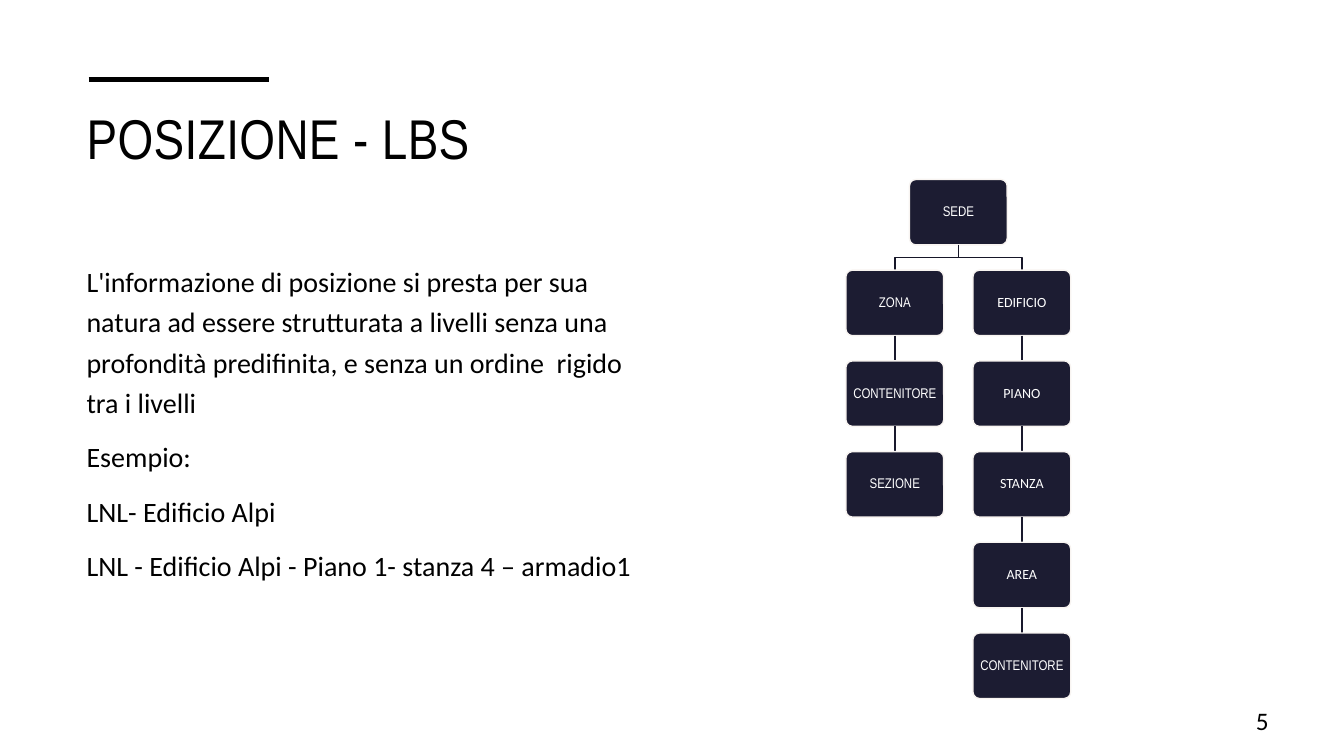
from lxml import etree
from pptx import Presentation
from pptx.dml.color import RGBColor
from pptx.enum.shapes import MSO_CONNECTOR as Connector, MSO_SHAPE as Shape
from pptx.enum.text import MSO_ANCHOR as Anchor, PP_ALIGN as Align
from pptx.oxml.ns import qn
from pptx.util import Inches, Pt

BLACK = RGBColor(0x00, 0x00, 0x00)
WHITE = RGBColor(0xFF, 0xFF, 0xFF)
NAVY = RGBColor(0x1C, 0x1C, 0x32)
CREAM = RGBColor(0xF8, 0xF4, 0xF1)
ELBOW_INK = RGBColor(0x16, 0x16, 0x28)
STEM_INK = RGBColor(0x19, 0x19, 0x2D)
NARROW = "Arial Narrow"
SANS = "Calibri"

BODY = [
    "L'informazione di posizione si presta per sua natura ad essere strutturata "
    "a livelli senza una profondità predifinita, e senza un ordine  rigido tra i livelli",
    "Esempio:",
    "LNL- Edificio Alpi",
    "LNL - Edificio Alpi - Piano 1- stanza 4 – armadio1",
]
BRANCHES = [
    [("ZONA", NARROW), ("CONTENITORE", NARROW), ("SEZIONE", NARROW)],
    [("EDIFICIO", SANS), ("PIANO", SANS), ("STANZA", SANS), ("AREA", SANS),
     ("CONTENITORE", NARROW)],
]
NODE_WIDTH, NODE_HEIGHT = 0.97, 0.65
COLUMN_STEP, ROW_STEP = 1.26, 0.9


def set_font(paragraph, name, size, color):
    paragraph.font.name = name
    paragraph.font.size = Pt(size)
    paragraph.font.color.rgb = color


def add_line(slide, start, end, color, width):
    line = slide.shapes.add_connector(
        Connector.STRAIGHT, *(Inches(value) for value in (*start, *end)))
    line.line.color.rgb = color
    line.line.width = Pt(width)
    etree.SubElement(line._element.spPr, qn("a:effectLst"))


def add_title(slide, left, top, width, height):
    add_line(slide, (left + 0.12, top - 0.19), (left + 1.91, top - 0.19), BLACK, 3.5)
    title = slide.shapes.title
    title.left, title.top = Inches(left), Inches(top)
    title.width, title.height = Inches(width), Inches(height)
    frame = title.text_frame
    frame.text = "POSIZIONE - LBS"
    frame.vertical_anchor = Anchor.TOP
    frame.word_wrap = True
    paragraph = frame.paragraphs[0]
    paragraph.alignment = Align.LEFT
    set_font(paragraph, NARROW, 40, BLACK)
    paragraph.runs[0].font._element.set("spc", "30")


def add_body(slide, left, top, width, height):
    box = slide.shapes.add_textbox(*map(Inches, (left, top, width, height)))
    frame = box.text_frame
    frame.word_wrap = True
    frame.text = "\n".join(BODY)
    for paragraph in frame.paragraphs:
        paragraph.line_spacing = 1.2
        paragraph.space_before = Pt(10)
        set_font(paragraph, SANS, 20, BLACK)


def add_node(slide, center, top, label, font):
    node = slide.shapes.add_shape(
        Shape.ROUNDED_RECTANGLE, Inches(center - NODE_WIDTH / 2), Inches(top),
        Inches(NODE_WIDTH), Inches(NODE_HEIGHT))
    node.adjustments[0] = 0.1
    node.shadow.inherit = False
    node.fill.solid()
    node.fill.fore_color.rgb = NAVY
    node.line.color.rgb = CREAM
    node.line.width = Pt(1)
    frame = node.text_frame
    frame.margin_left = frame.margin_right = Inches(0.04)
    frame.margin_top = frame.margin_bottom = Inches(0.04)
    frame.vertical_anchor = Anchor.MIDDLE
    frame.word_wrap = True
    frame.text = label
    paragraph = frame.paragraphs[0]
    paragraph.alignment = Align.CENTER
    paragraph.line_spacing = 0.9
    set_font(paragraph, font, 10, WHITE)


def add_elbow(slide, start, end):
    middle = (start[1] + end[1]) / 2
    corners = [start, (start[0], middle), (end[0], middle), end]
    first, *others = [(Inches(x), Inches(y)) for x, y in corners]
    builder = slide.shapes.build_freeform(*first)
    builder.add_line_segments(others, close=False)
    elbow = builder.convert_to_shape()
    elbow.shadow.inherit = False
    elbow.fill.background()
    elbow.line.color.rgb = ELBOW_INK
    elbow.line.width = Pt(1)


def add_tree(slide, left, top):
    root = left + (NODE_WIDTH + COLUMN_STEP) / 2
    add_node(slide, root, top, "SEDE", NARROW)
    for column, branch in enumerate(BRANCHES):
        center = left + NODE_WIDTH / 2 + column * COLUMN_STEP
        for level, (label, font) in enumerate(branch, start=1):
            node_top = top + level * ROW_STEP
            parent_bottom = node_top - ROW_STEP + NODE_HEIGHT
            if level == 1:
                add_elbow(slide, (root, parent_bottom), (center, node_top))
            else:
                add_line(slide, (center, parent_bottom), (center, node_top), STEM_INK, 1)
            add_node(slide, center, node_top, label, font)


def add_page_number(slide, left, top, width, height):
    box = slide.shapes.add_textbox(*map(Inches, (left, top, width, height)))
    frame = box.text_frame
    frame.word_wrap = True
    frame.vertical_anchor = Anchor.MIDDLE
    frame.text = "5"
    paragraph = frame.paragraphs[0]
    paragraph.alignment = Align.RIGHT
    set_font(paragraph, SANS, 18, BLACK)


def main():
    presentation = Presentation()
    presentation.slide_width = Inches(13.33)
    presentation.slide_height = Inches(7.5)
    slide = presentation.slides.add_slide(presentation.slide_layouts[5])
    add_title(slide, 0.76, 0.98, 4.45, 1.72)
    add_tree(slide, 8.39, 1.78)
    add_body(slide, 0.76, 2.51, 5.68, 3.98)
    add_page_number(slide, 11.94, 6.95, 0.74, 0.4)
    presentation.save("out.pptx")


if __name__ == "__main__":
    main()
